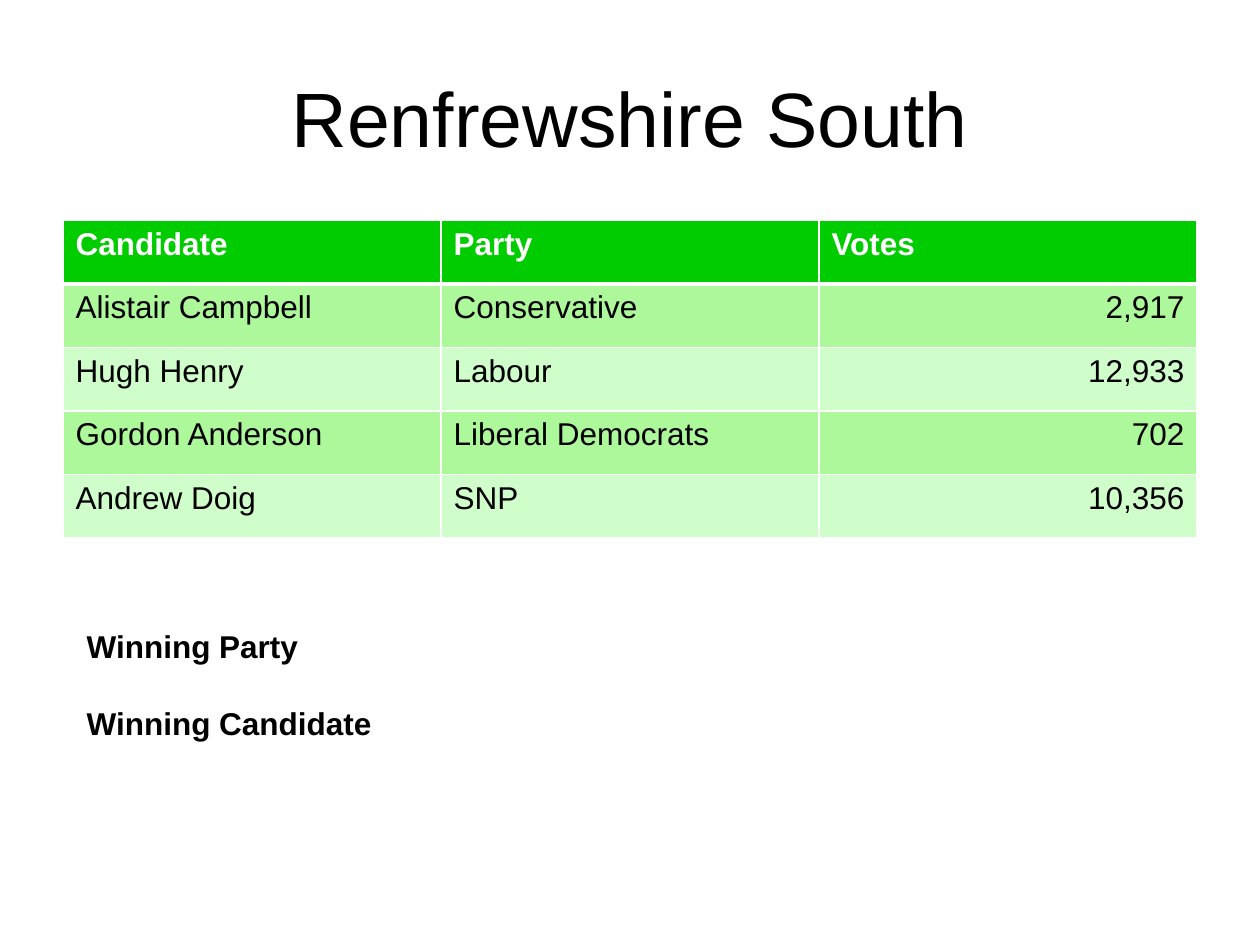
import pptx
import pptx.util
import pptx.dml.color
import pptx.enum.text
import lxml.etree

Inches, Pt = pptx.util.Inches, pptx.util.Pt
RGBColor = pptx.dml.color.RGBColor
ALIGN = pptx.enum.text.PP_ALIGN
ANCHOR = pptx.enum.text.MSO_ANCHOR

BLACK = RGBColor(0, 0, 0)
WHITE = RGBColor(255, 255, 255)
GREEN = RGBColor(0x00, 0xCC, 0x00)
BANDS = [RGBColor(0xAC, 0xF8, 0x9A), RGBColor(0xD0, 0xFE, 0xCA)]

ROWS = [
    ("Candidate", "Party", "Votes"),
    ("Alistair Campbell", "Conservative", "2,917"),
    ("Hugh Henry", "Labour", "12,933"),
    ("Gordon Anderson", "Liberal Democrats", "702"),
    ("Andrew Doig", "SNP", "10,356"),
]
LABELS = ["Winning Party", "Winning Candidate"]


def style(para, size, color=BLACK, bold=False, align=ALIGN.LEFT):
    para.alignment = align
    for run in para.runs:
        font = run.font
        font.name, font.size, font.bold = "Arial", Pt(size), bold
        font.color.rgb = color


def edge(cell, side, width):
    """Draw one white border of a cell; the fill must be set afterwards."""
    props = cell._tc.get_or_add_tcPr()
    line = pptx.oxml.ns.qn(f"a:ln{side}")
    line = lxml.etree.SubElement(props, line, w=str(Pt(width)))
    fill = lxml.etree.SubElement(line, pptx.oxml.ns.qn("a:solidFill"))
    lxml.etree.SubElement(fill, pptx.oxml.ns.qn("a:srgbClr"), val=str(WHITE))


def add_title(slide, text):
    title = slide.shapes.title
    title.left, title.top = Inches(0.5), Inches(0.3)
    title.width, title.height = Inches(9), Inches(1.25)
    frame = title.text_frame
    frame.text = text
    frame.vertical_anchor = ANCHOR.MIDDLE
    style(frame.paragraphs[0], 44, align=ALIGN.CENTER)


def add_votes(slide):
    shape = slide.shapes.add_table(len(ROWS), 3, Inches(0.5), Inches(1.75),
                                   Inches(9), Inches(2.52))
    table = shape.table
    for r, row in enumerate(ROWS):
        head = r == 0
        for c, text in enumerate(row):
            cell = table.cell(r, c)
            # Borders: a thick rule parts the header from the body
            edge(cell, "L", 1)
            edge(cell, "R", 1)
            edge(cell, "T", 3 if r == 1 else 1)
            edge(cell, "B", 3 if head else 1)
            cell.fill.solid()
            cell.fill.fore_color.rgb = GREEN if head else BANDS[(r - 1) % 2]
            # Text: vote counts sit on the right
            cell.text_frame.text = text
            count = c == 2 and not head
            style(cell.text_frame.paragraphs[0], 18,
                  WHITE if head else BLACK, head,
                  ALIGN.RIGHT if count else ALIGN.LEFT)


def add_labels(slide):
    box = slide.shapes.add_textbox(Inches(0.59), Inches(4.93),
                                   Inches(8.5), Inches(1.01))
    frame = box.text_frame
    frame.word_wrap = True
    frame.text = "\n".join(LABELS)
    for para in frame.paragraphs:
        style(para, 18, bold=True)
    frame.paragraphs[1].space_before = Pt(22)


def main():
    deck = pptx.Presentation()
    deck.slide_width, deck.slide_height = Inches(10), Inches(7.5)
    # Title Only layout
    slide = deck.slides.add_slide(deck.slide_layouts[5])
    add_title(slide, "Renfrewshire South")
    add_votes(slide)
    add_labels(slide)
    deck.save("out.pptx")


if __name__ == "__main__":
    main()
